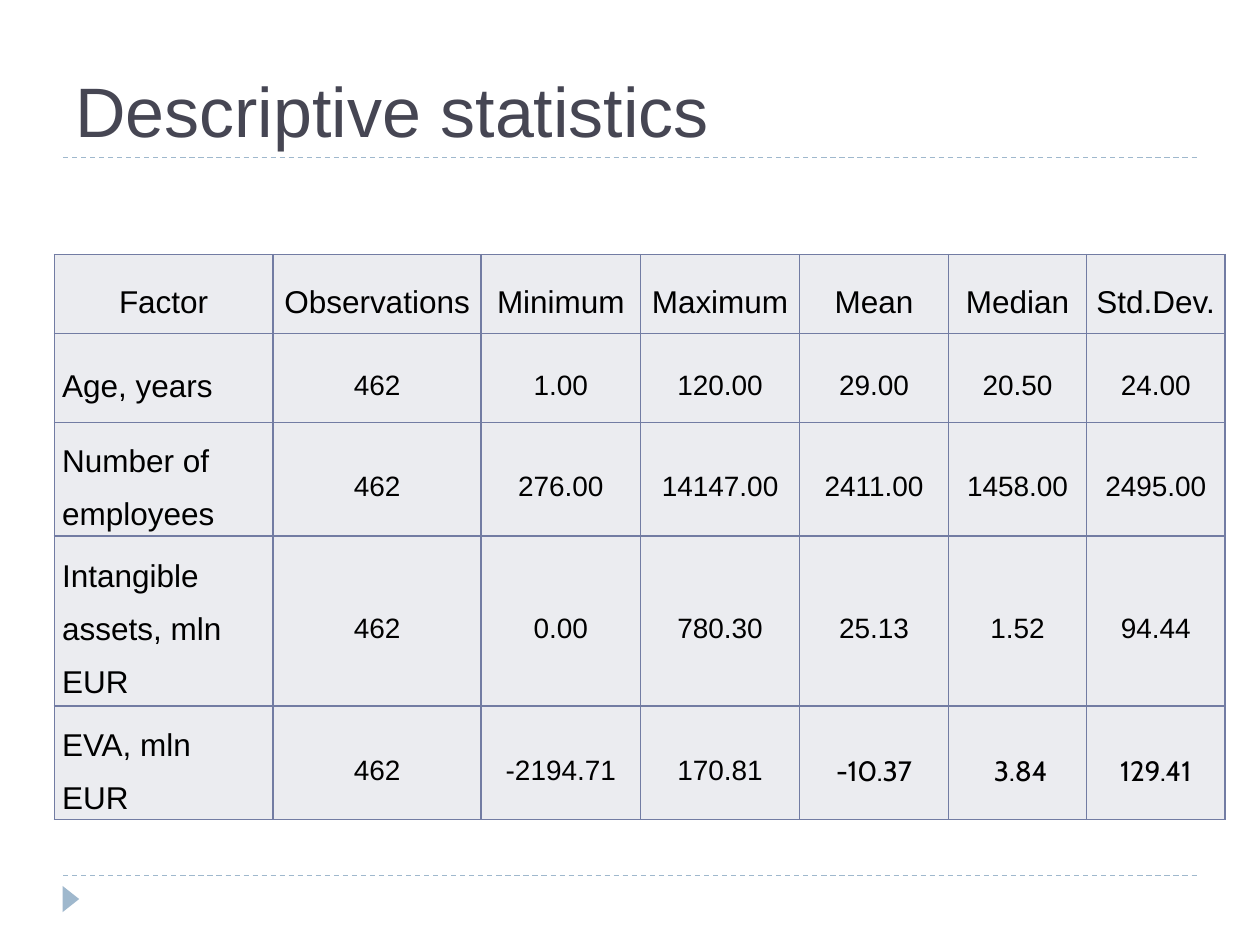
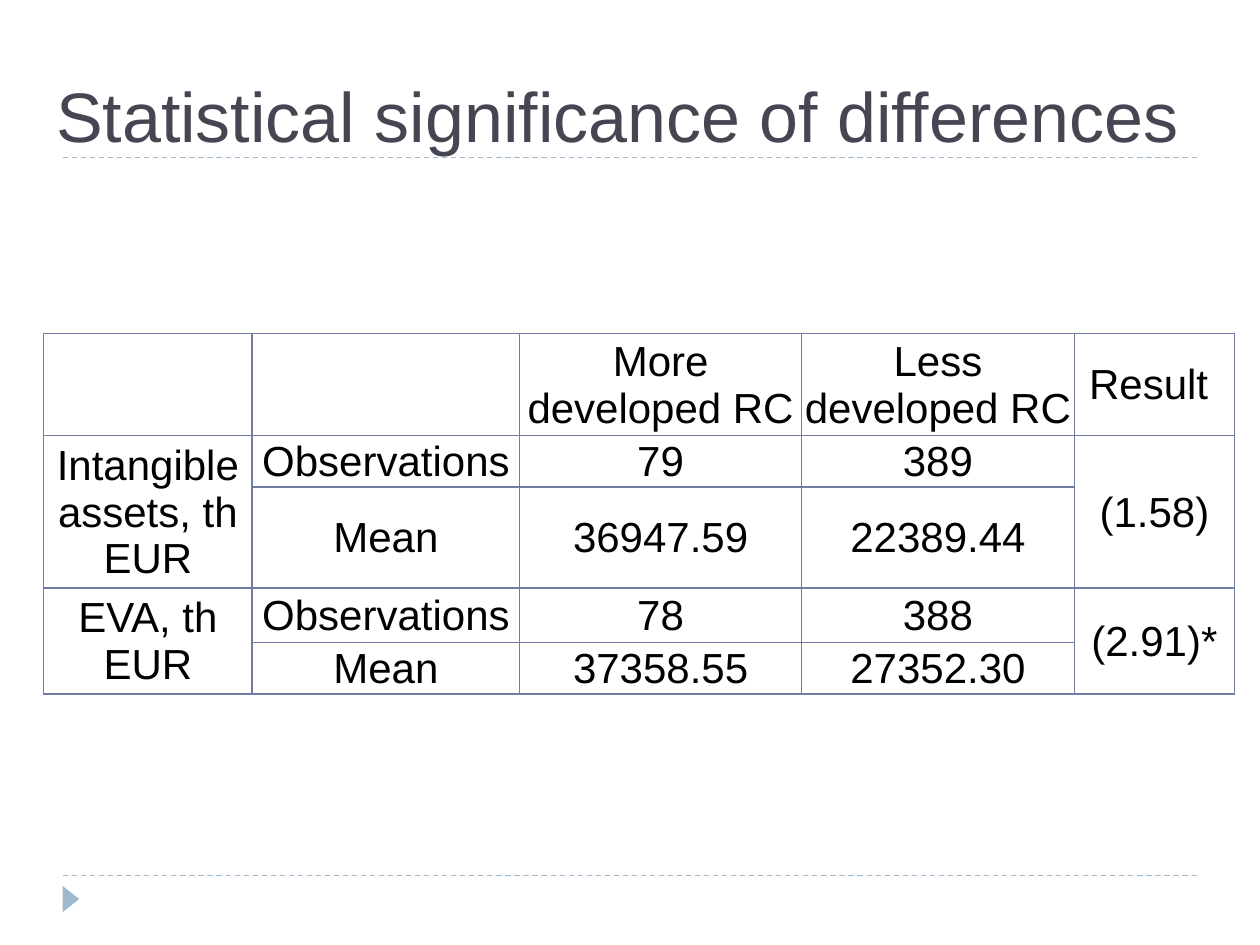
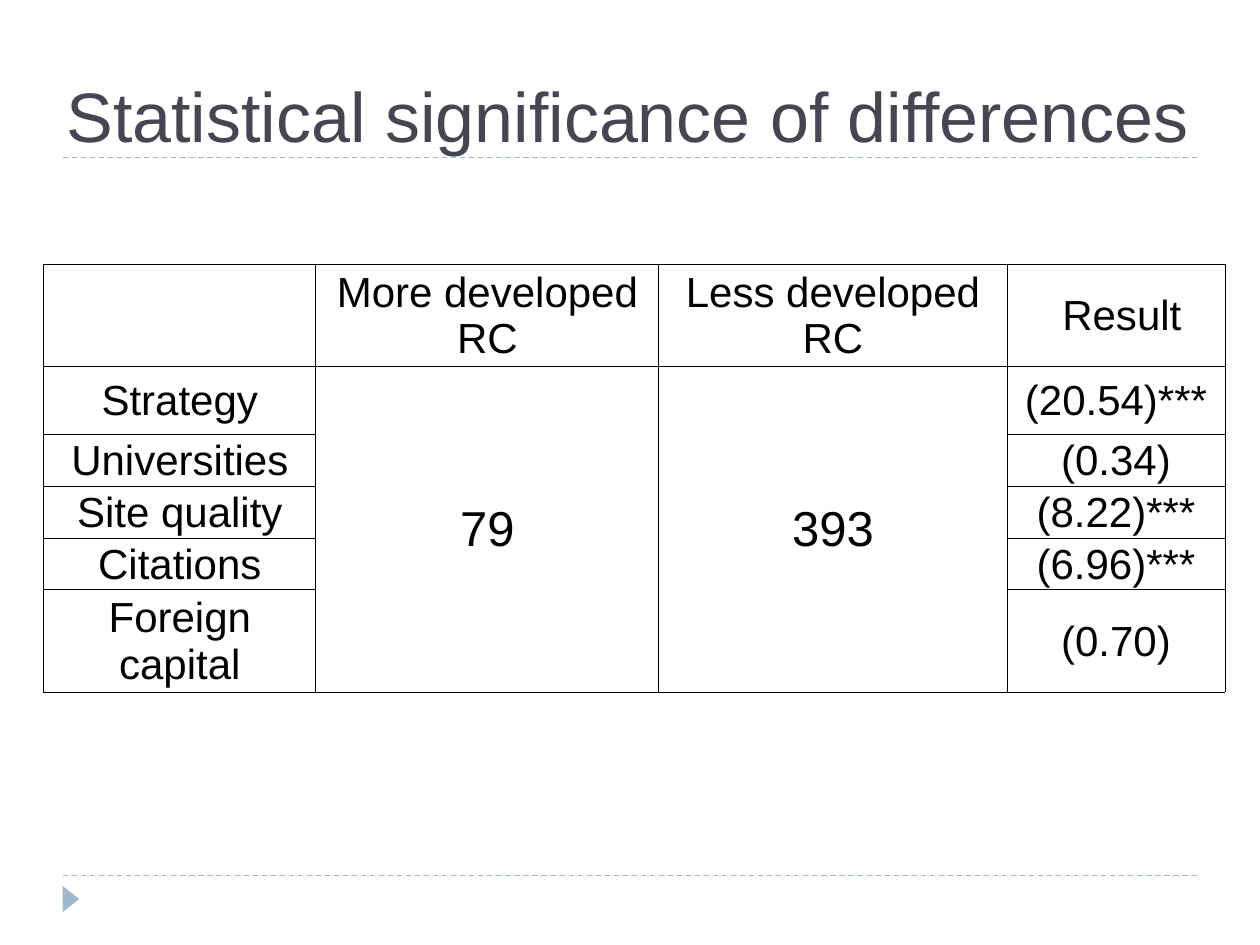
"""Build three slides of descriptive statistics and significance tables."""
from lxml import etree
from pptx import Presentation
from pptx.dml.color import RGBColor
from pptx.enum.dml import MSO_LINE
from pptx.enum.shapes import MSO_CONNECTOR, MSO_SHAPE
from pptx.enum.text import MSO_ANCHOR, PP_ALIGN
from pptx.oxml.ns import qn
from pptx.util import Pt

LEFT, CENTER = PP_ALIGN.LEFT, PP_ALIGN.CENTER
MIDDLE, BOTTOM = MSO_ANCHOR.MIDDLE, MSO_ANCHOR.BOTTOM
STRAIGHT, TRIANGLE, DASH = MSO_CONNECTOR.STRAIGHT, MSO_SHAPE.ISOSCELES_TRIANGLE, MSO_LINE.DASH

COLORS = {"title": "464653", "accent": "9FB8CD", "grid": "727CA3", "cell": "EBECF0", "black": "000000"}
FONT, NUMBER_FONT = "Arial", "Cabin"
RULE_TOPS = (90, 500.5)
RULE_LEFT, RULE_RIGHT = 36, 684
MARKER = (33, 509, 15, 9.5)
COMPACT = {"margin_left": Pt(0.75), "margin_right": Pt(0.75), "margin_top": Pt(0.75), "margin_bottom": 0}
ROOMY = {"margin_left": Pt(4.5), "margin_right": Pt(4.5), "margin_top": 0, "margin_bottom": 0}

# None continues the cell above.
SLIDES = [
    {
        "title": "Descriptive statistics",
        "title_box": (36, 12.5, 648, 77.5),
        "corner": (31, 145.5),
        "columns": [125, 119, 91, 91, 85, 79, 79],
        "heights": [45, 51, 60.5, 91, 60.5],
        "border": ("grid", 1),
        "fill": "cell",
        "margins": ROOMY,
        "spacing": 1.5,
        "sizes": {"label": 18, "value": 16},
        "label_align": LEFT,
        "number_font_cells": [(4, 4), (4, 5), (4, 6)],
        "rows": [
            ["Factor", "Observations", "Minimum", "Maximum", "Mean", "Median", "Std.Dev."],
            ["Age, years", "462", "1.00", "120.00", "29.00", "20.50", "24.00"],
            ["Number of employees", "462", "276.00", "14147.00", "2411.00", "1458.00", "2495.00"],
            ["Intangible assets, mln EUR", "462", "0.00", "780.30", "25.13", "1.52", "94.44"],
            ["EVA, mln EUR", "462", "-2194.71", "170.81", "-10.37", " 3.84", "129.41"],
        ],
    },
    {
        "title": "Statistical significance of differences",
        "title_box": (25, 15.5, 670, 77.5),
        "corner": (25, 190.5),
        "columns": [119, 153, 161, 156, 91.5],
        "heights": [55, 29.5, 51, 31, 29.5],
        "border": ("grid", 1),
        "rows": [
            ["", "", "More developed RC", "Less developed RC", "Result "],
            ["Intangible assets, th EUR", "Observations", "79", "389", "(1.58)"],
            [None, "Mean", "36947.59", "22389.44", None],
            ["EVA, th EUR", "Observations", "78", "388", "(2.91)*"],
            [None, "Mean", "37358.55", "27352.30", None],
        ],
    },
    {
        "title": "Statistical significance of differences",
        "title_box": (31, 15.5, 664, 77.5),
        "corner": (25, 151),
        "columns": [155.5, 196, 199, 124.5],
        "heights": [55.5, 39, 27.5, 27.5, 27.5, 54.5],
        "border": ("black", 0.5),
        "merged_size": 28,
        "rows": [
            ["", "More developed RC", "Less developed RC", " Result"],
            ["Strategy", "79", "393", "(20.54)***"],
            ["Universities", None, None, "(0.34)"],
            ["Site quality", None, None, "(8.22)***"],
            ["Citations", None, None, "(6.96)***"],
            ["Foreign capital", None, None, "(0.70)"],
        ],
    },
]


def color(name):
    return RGBColor.from_string(COLORS[name])


def assign(target, values):
    for name, value in values.items():
        setattr(target, name, value)


def write(frame, text, size, ink, font=FONT, **paragraph_format):
    para = frame.paragraphs[0]
    assign(para, paragraph_format)
    span = para.add_run()
    span.text = text
    assign(span.font, {"name": font, "size": Pt(size)})
    span.font.color.rgb = color(ink)


def add_frame(page, title, title_box):
    for top in RULE_TOPS:
        rule = page.shapes.add_connector(STRAIGHT, Pt(RULE_LEFT), Pt(top), Pt(RULE_RIGHT), Pt(top))
        rule.line.color.rgb = color("accent")
        assign(rule.line, {"width": Pt(0.75), "dash_style": DASH})
        etree.SubElement(rule._element.spPr, qn("a:effectLst"))
    marker = page.shapes.add_shape(TRIANGLE, *map(Pt, MARKER))
    marker.rotation = 90
    marker.shadow.inherit = False
    marker.fill.solid()
    marker.fill.fore_color.rgb = color("accent")
    marker.line.fill.background()
    box = page.shapes.add_textbox(*map(Pt, title_box))
    assign(box.text_frame, {"word_wrap": True, "vertical_anchor": BOTTOM})
    write(box.text_frame, title, 40, "title")


def add_borders(cell, ink, width):
    properties = cell._tc.get_or_add_tcPr()
    for side in ("lnL", "lnR", "lnT", "lnB"):
        line = etree.SubElement(properties, qn(f"a:{side}"), w=str(Pt(width)))
        solid = etree.SubElement(line, qn("a:solidFill"))
        etree.SubElement(solid, qn("a:srgbClr"), val=COLORS[ink])


def merge_down(table, rows):
    """Merge each cell with the continuations below it and return the merged places."""
    merged = set()
    for column in range(len(rows[0])):
        for first in range(len(rows)):
            last = first
            while last + 1 < len(rows) and rows[last + 1][column] is None:
                last += 1
            if rows[first][column] is not None and last > first:
                table.cell(first, column).merge(table.cell(last, column))
                merged.add((first, column))
    return merged


def add_grid(page, content):
    rows, columns, heights = content["rows"], content["columns"], content["heights"]
    extent = (*content["corner"], sum(columns), sum(heights))
    table = page.shapes.add_table(len(rows), len(columns), *map(Pt, extent)).table
    assign(table, {"first_row": False, "horz_banding": False})
    for column, width in zip(table.columns, columns):
        column.width = Pt(width)
    for row, height in zip(table.rows, heights):
        row.height = Pt(height)
    merged = merge_down(table, rows)
    sizes = content.get("sizes", {"label": 24, "value": 24})
    for r, texts in enumerate(rows):
        for c, text in enumerate(texts):
            cell = table.cell(r, c)
            assign(cell, {"vertical_anchor": MIDDLE, **content.get("margins", COMPACT)})
            add_borders(cell, *content["border"])
            if "fill" in content:
                cell.fill.solid()
                cell.fill.fore_color.rgb = color(content["fill"])
            else:
                cell.fill.background()
            if not text:
                continue
            size = sizes["label" if r == 0 or c == 0 else "value"]
            if (r, c) in merged:
                size = content.get("merged_size", size)
            font = NUMBER_FONT if (r, c) in content.get("number_font_cells", []) else FONT
            align = content.get("label_align", CENTER) if r and c == 0 else CENTER
            write(cell.text_frame, text, size, "black", font,
                  alignment=align, line_spacing=content.get("spacing"))


def main():
    deck = Presentation()
    assign(deck, {"slide_width": Pt(720), "slide_height": Pt(540)})
    for content in SLIDES:
        page = deck.slides.add_slide(deck.slide_layouts[6])
        add_frame(page, content["title"], content["title_box"])
        add_grid(page, content)
    deck.save("out.pptx")


if __name__ == "__main__":
    main()
